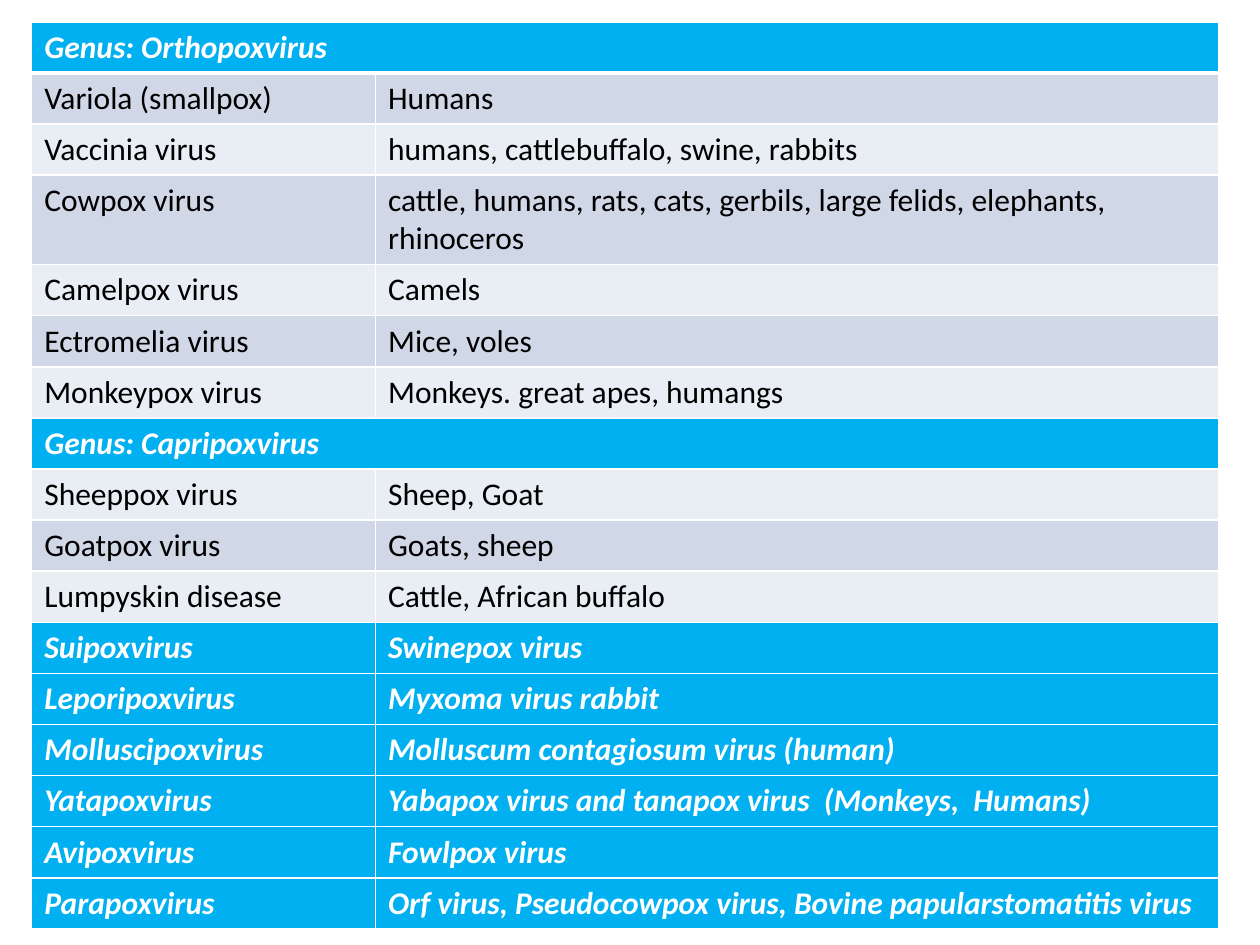
import pptx
import pptx.dml.color
import pptx.oxml
import pptx.oxml.ns
import pptx.util
from pptx.dml.color import RGBColor
from pptx.util import Cm

SKY = RGBColor(0x00, 0xB0, 0xF0)
BAND_DARK = RGBColor(0xD0, 0xD8, 0xE8)
BAND_LIGHT = RGBColor(0xE9, 0xED, 0xF4)
WHITE = RGBColor(0xFF, 0xFF, 0xFF)
BLACK = RGBColor(0x00, 0x00, 0x00)

GENUS, VIRUS = "genus", "virus"
ROWS = [
    (GENUS, "Genus: Orthopoxvirus", None),
    (VIRUS, "Variola (smallpox)", "Humans"),
    (VIRUS, "Vaccinia virus", "humans, cattlebuffalo, swine, rabbits"),
    (VIRUS, "Cowpox virus", "cattle, humans, rats, cats, gerbils, large felids, elephants, rhinoceros"),
    (VIRUS, "Camelpox virus", "Camels"),
    (VIRUS, "Ectromelia virus", "Mice, voles"),
    (VIRUS, "Monkeypox virus", "Monkeys. great apes, humangs"),
    (GENUS, "Genus: Capripoxvirus", None),
    (VIRUS, "Sheeppox virus", "Sheep, Goat"),
    (VIRUS, "Goatpox virus", "Goats, sheep"),
    (VIRUS, "Lumpyskin disease", "Cattle, African buffalo"),
    (GENUS, "Suipoxvirus", "Swinepox virus"),
    (GENUS, "Leporipoxvirus", "Myxoma virus rabbit"),
    (GENUS, "Molluscipoxvirus", "Molluscum contagiosum virus (human)"),
    (GENUS, "Yatapoxvirus", "Yabapox virus and tanapox virus  (Monkeys,  Humans)"),
    (GENUS, "Avipoxvirus", "Fowlpox virus"),
    (GENUS, "Parapoxvirus", "Orf virus, Pseudocowpox virus, Bovine papularstomatitis virus"),
]
COLUMN_WIDTHS = [Cm(6.93), Cm(16.99)]
ROW_HEIGHT = Cm(1.03)
LEFT, TOP = Cm(0.64), Cm(0.44)


def set_borders(cell, top, bottom):
    properties = cell._tc.get_or_add_tcPr()
    widths = {"lnL": 1, "lnR": 1, "lnT": top, "lnB": bottom}
    for position, (side, width) in enumerate(widths.items()):
        border = pptx.oxml.parse_xml(
            f'<a:{side} {pptx.oxml.ns.nsdecls("a")} w="{pptx.util.Pt(width)}">'
            f'<a:solidFill><a:srgbClr val="{WHITE}"/></a:solidFill></a:{side}>'
        )
        properties.insert(position, border)


def format_cell(cell, text, fill, is_genus):
    cell.fill.solid()
    cell.fill.fore_color.rgb = fill
    cell.text_frame.text = text
    for run in cell.text_frame.paragraphs[0].runs:
        run.font.name = "Calibri"
        run.font.size = pptx.util.Pt(18)
        run.font.bold = run.font.italic = is_genus
        run.font.color.rgb = WHITE if is_genus else BLACK


def main():
    presentation = pptx.Presentation()
    presentation.slide_width, presentation.slide_height = Cm(25.4), Cm(19.05)
    slide = presentation.slides.add_slide(presentation.slide_layouts[6])
    table = slide.shapes.add_table(
        len(ROWS), len(COLUMN_WIDTHS), LEFT, TOP, sum(COLUMN_WIDTHS), ROW_HEIGHT * len(ROWS)
    ).table
    for column, width in zip(table.columns, COLUMN_WIDTHS):
        column.width = width

    for index, (kind, name, hosts) in enumerate(ROWS):
        table.rows[index].height = ROW_HEIGHT
        is_genus = kind == GENUS
        band = BAND_DARK if index % 2 else BAND_LIGHT
        if hosts is None:
            table.cell(index, 0).merge(table.cell(index, 1))
        for column, text in enumerate((name, hosts or "")):
            cell = table.cell(index, column)
            format_cell(cell, text, SKY if is_genus else band, is_genus)
            set_borders(cell, top=3 if index == 1 else 1, bottom=3 if index == 0 else 1)

    presentation.save("out.pptx")


if __name__ == "__main__":
    main()
